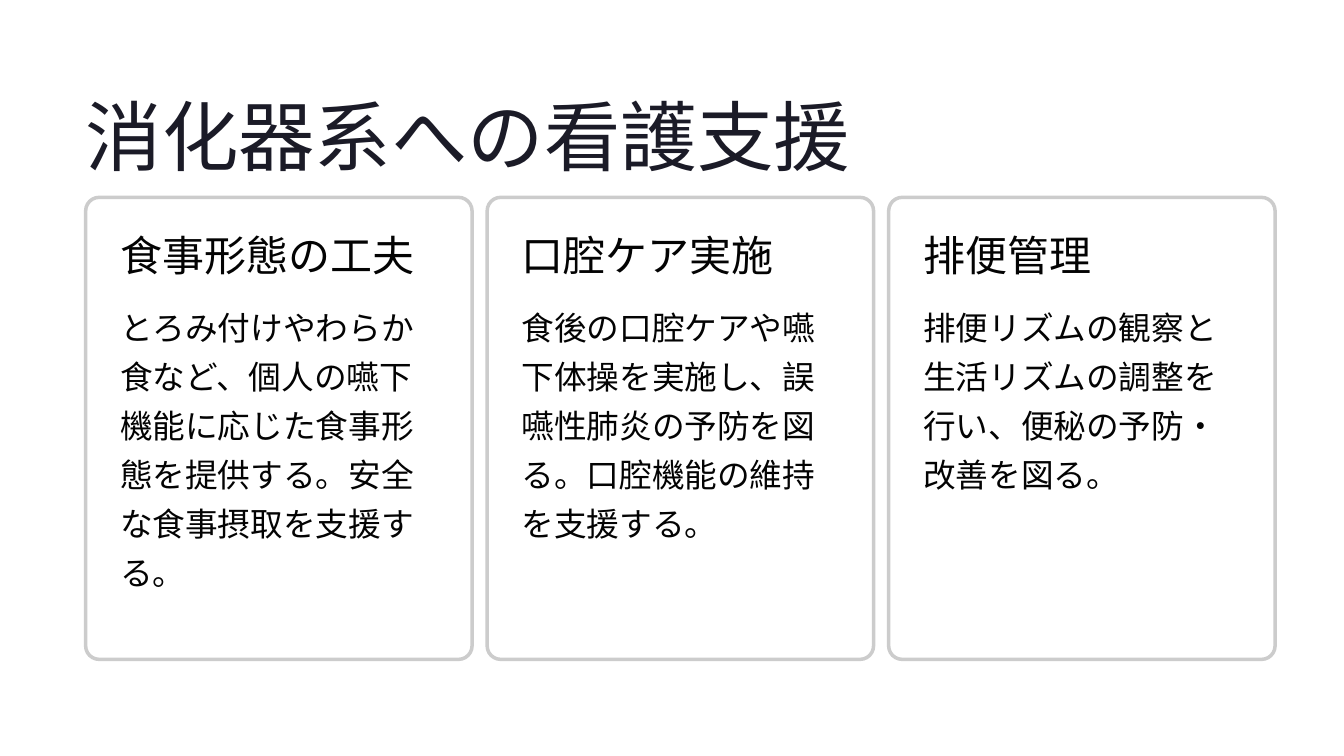
from dataclasses import dataclass

from lxml.etree import SubElement
from pptx import Presentation
from pptx.dml.color import RGBColor
from pptx.enum.shapes import MSO_SHAPE as Shape
from pptx.enum.text import MSO_ANCHOR as Anchor
from pptx.oxml.ns import qn
from pptx.util import Inches, Pt


@dataclass(frozen=True)
class TextStyle:
    font: str
    size: float
    leading: float
    color: str
    wrap: bool = False


@dataclass(frozen=True)
class Theme:
    title: TextStyle = TextStyle("Inter", 65.5, 82, "1B1B27")
    heading: TextStyle = TextStyle("Inter", 36, 41, "030303")
    body: TextStyle = TextStyle("Lato", 28, 42, "030303", wrap=True)
    card_fill: str = "FFFFFF"
    card_opacity: int = 95
    card_line: str = "CCCCCC"
    card_line_width: float = 3


THEME = Theme()

LEFT, CARD_TOP = 1.02, 2.35
CARD_WIDTH, CARD_HEIGHT, CARD_GAP = 4.6, 5.5, 0.18
PADDING, TEXT_WIDTH = 0.41, 3.75
BODY_OFFSET, BODY_LINE_HEIGHT = 1.2, 0.63

# Heading, body text, number of body lines
CARDS = [
    ("食事形態の工夫",
     "とろみ付けやわらか食など、個人の嚥下機能に応じた食事形態を提供する。"
     "安全な食事摂取を支援する。", 6),
    ("口腔ケア実施",
     "食後の口腔ケアや嚥下体操を実施し、誤嚥性肺炎の予防を図る。"
     "口腔機能の維持を支援する。", 5),
    ("排便管理",
     "排便リズムの観察と生活リズムの調整を行い、便秘の予防・改善を図る。", 4),
]


def set_attributes(target, values):
    for name, value in values.items():
        setattr(target, name, value)


def add_text(slide, text, box, style):
    shape = slide.shapes.add_textbox(*map(Inches, box))
    frame = shape.text_frame
    set_attributes(frame, {
        "margin_left": 0, "margin_top": 0, "margin_right": 0, "margin_bottom": 0,
        "word_wrap": style.wrap, "vertical_anchor": Anchor.TOP,
    })
    paragraph = frame.paragraphs[0]
    paragraph.line_spacing = Pt(style.leading)
    run = paragraph.add_run()
    run.text = text
    set_attributes(run.font, {"name": style.font, "size": Pt(style.size)})
    run.font.color.rgb = RGBColor.from_string(style.color)


def add_panel(slide, box):
    """Add the rounded, slightly transparent frame of a card."""
    panel = slide.shapes.add_shape(Shape.ROUNDED_RECTANGLE, *map(Inches, box))
    panel.shadow.inherit = False
    panel.adjustments[0] = 0.035
    panel.fill.solid()
    panel.fill.fore_color.rgb = RGBColor.from_string(THEME.card_fill)
    fill_color = panel.fill._xPr.find(qn("a:solidFill"))[0]
    SubElement(fill_color, qn("a:alpha"), val=str(THEME.card_opacity * 1000))
    panel.line.color.rgb = RGBColor.from_string(THEME.card_line)
    panel.line.width = Pt(THEME.card_line_width)


def add_card(slide, left, heading, body, line_count):
    add_panel(slide, (left, CARD_TOP, CARD_WIDTH, CARD_HEIGHT))
    text_left = left + PADDING
    add_text(slide, heading,
             (text_left, CARD_TOP + PADDING, TEXT_WIDTH, 0.61), THEME.heading)
    add_text(slide, body,
             (text_left, CARD_TOP + BODY_OFFSET, TEXT_WIDTH,
              line_count * BODY_LINE_HEIGHT), THEME.body)


def main():
    presentation = Presentation()
    set_attributes(presentation, {"slide_width": Inches(16), "slide_height": Inches(9)})
    slide = presentation.slides.add_slide(presentation.slide_layouts[6])
    add_text(slide, "消化器系への看護支援", (LEFT, 1.01, 9.13, 1.14), THEME.title)
    for index, card in enumerate(CARDS):
        add_card(slide, LEFT + index * (CARD_WIDTH + CARD_GAP), *card)
    presentation.save("out.pptx")


if __name__ == "__main__":
    main()
